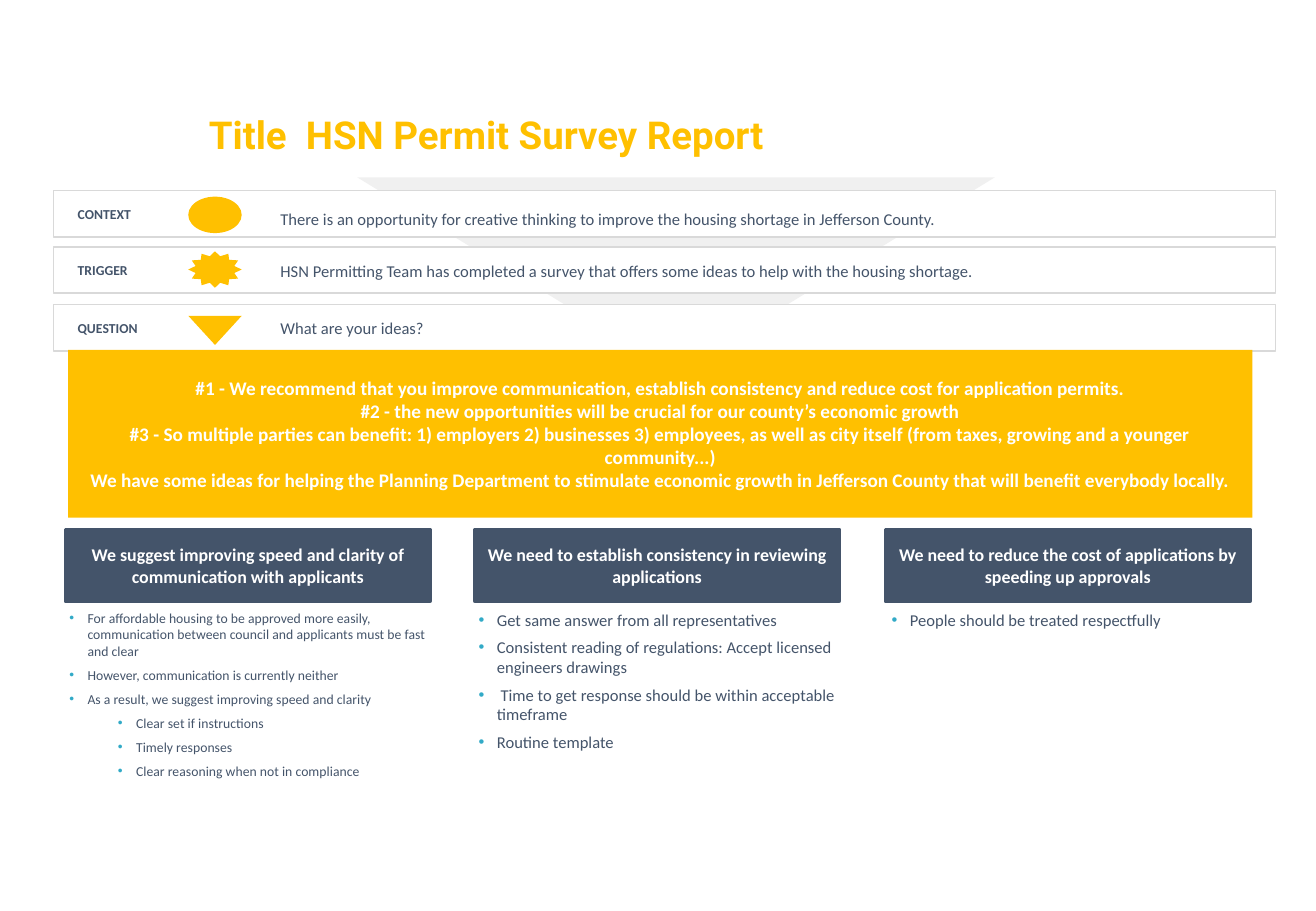
"""Builds the permit survey report slide."""
from lxml.etree import SubElement
from pptx import Presentation
from pptx.dml.color import RGBColor
from pptx.enum.shapes import MSO_SHAPE
from pptx.enum.text import MSO_ANCHOR, MSO_AUTO_SIZE, PP_ALIGN
from pptx.oxml.ns import qn
from pptx.util import Pt

GOLD = RGBColor(0xFF, 0xC0, 0x00)
SLATE = RGBColor(0x44, 0x54, 0x6A)
GREY = RGBColor(0xD9, 0xD9, 0xD9)
WHITE = RGBColor(0xFF, 0xFF, 0xFF)
BULLET = RGBColor(0x32, 0xAA, 0xC7)

SMALL, BODY = 8.1, 9.8
LABEL = {"size": Pt(SMALL), "color": SLATE, "bold": True}
STATEMENT = {"size": Pt(BODY), "color": SLATE}
BANNER = {"size": Pt(11.4), "color": WHITE, "bold": True}
HEADING = {"size": Pt(10.6), "color": WHITE, "bold": True}
TITLE = {"size": Pt(22.8), "color": GOLD, "bold": True, "name": "Roboto"}

ROWS = [
    ("CONTEXT", "There is an opportunity for creative thinking to improve the housing "
     "shortage in Jefferson County.", 126.7, 130, MSO_SHAPE.OVAL, 127.4, 21.6, 0),
    ("TRIGGER", "HSN Permitting Team has completed a survey that offers some ideas to "
     "help with the housing shortage.", 159.9, 160.6, MSO_SHAPE.STAR_12_POINT, 159.8, 21.6, 0),
    ("QUESTION", "What are your ideas?", 194.2, 194.4,
     MSO_SHAPE.ISOSCELES_TRIANGLE, 195.8, 17.3, 180),
]
RECOMMENDATIONS = [
    "#1 - We recommend that you improve communication, establish consistency and reduce "
    "cost for application permits.",
    "#2 - the new opportunities will be crucial for our county’s economic growth",
    "#3 - So multiple parties can benefit: 1) employers 2) businesses 3) employees, as well "
    "as city itself (from taxes, growing and a younger community...)",
    "We have some ideas for helping the Planning Department to stimulate economic growth in "
    "Jefferson County that will benefit everybody locally.",
]
COLUMNS = [
    ("We suggest improving speed and clarity of communication with applicants",
     38.9, 38.9, 228.2, SMALL, [
         (0, "For affordable housing to be approved more easily, communication between "
             "council and applicants must be fast and clear"),
         (0, "However, communication is currently neither"),
         (0, "As a result, we suggest improving speed and clarity"),
         (1, "Clear set if instructions"),
         (1, "Timely responses"),
         (1, "Clear reasoning when not in compliance")]),
    ("We need to establish consistency in reviewing applications",
     281.5, 281.5, 218.9, BODY, [
         (0, "Get same answer from all representatives"),
         (0, "Consistent reading of regulations: Accept licensed engineers drawings"),
         (0, " Time to get response should be within acceptable timeframe"),
         (0, "Routine template")]),
    ("We need to reduce the cost of applications by speeding up approvals",
     524.9, 526.3, 218.9, BODY, [(0, "People should be treated respectfully")]),
]


def add_text(para, text, style):
    """Add one formatted span to a paragraph."""
    span = para.add_run()
    span.text = text
    for key, value in {"name": "Calibri", **style}.items():
        if key == "color":
            span.font.color.rgb = value
        else:
            setattr(span.font, key, value)


def fill_frame(frame, texts, style, align=PP_ALIGN.LEFT):
    """Write one paragraph per text into a vertically centred frame."""
    settings = {"word_wrap": True, "auto_size": MSO_AUTO_SIZE.NONE,
                "vertical_anchor": MSO_ANCHOR.MIDDLE}
    for key, value in settings.items():
        setattr(frame, key, value)
    for index, text in enumerate(texts):
        para = frame.add_paragraph() if index else frame.paragraphs[0]
        para.alignment = align
        add_text(para, text, style)


def add_figure(page, kind, left, top, width, height, fill, line=None, weight=1, rotation=0):
    """Add a flat preset shape."""
    figure = page.shapes.add_shape(kind, Pt(left), Pt(top), Pt(width), Pt(height))
    figure.shadow.inherit = False
    figure.rotation = rotation
    figure.fill.solid()
    figure.fill.fore_color.rgb = fill
    if line is None:
        figure.line.fill.background()
    else:
        figure.line.color.rgb = line
        figure.line.width = Pt(weight)
    return figure


def add_caption(page, left, middle, width, text, style):
    """Add a one-line text box centred on a height."""
    height = 20.6
    box = page.shapes.add_textbox(Pt(left), Pt(middle - height / 2), Pt(width), Pt(height))
    fill_frame(box.text_frame, [text], style)


def add_bullets(page, left, width, size, items):
    """Add a bulleted list with two levels."""
    box = page.shapes.add_textbox(Pt(left), Pt(358.6), Pt(width), Pt(134.6))
    frame = box.text_frame
    margins = {"margin_left": 2.2, "margin_right": 2.2, "margin_top": 2.9, "margin_bottom": 2.9}
    for key, value in margins.items():
        setattr(frame, key, Pt(value))
    fill_frame(frame, [text for _, text in items], {"size": Pt(size), "color": SLATE})
    frame.vertical_anchor = MSO_ANCHOR.TOP
    for para, (level, _) in zip(frame.paragraphs, items):
        para.level = level
        para.space_after = Pt(4.5)
        properties = para._p.get_or_add_pPr()
        properties.set("marL", str(Pt(10.8 + 28.8 * level)))
        properties.set("indent", str(-Pt(10.8)))
        color = SubElement(properties, qn("a:buClr"))
        SubElement(color, qn("a:srgbClr")).set("val", str(BULLET))
        SubElement(properties, qn("a:buFont")).set("typeface", "Arial")
        SubElement(properties, qn("a:buChar")).set("char", "•")


def add_title(page, text):
    """Place and format the title placeholder."""
    title = page.shapes.title
    place = {"left": 116.6, "top": 51.8, "width": 590.4, "height": 59}
    for key, value in place.items():
        setattr(title, key, Pt(value))
    fill_frame(title.text_frame, [text], TITLE)
    title.text_frame.paragraphs[0].line_spacing = 0.9


def add_backdrop(page):
    """Add the translucent triangle that points down behind the rows."""
    backdrop = add_figure(page, MSO_SHAPE.ISOSCELES_TRIANGLE, 211.7, 105.1, 378, 115.9,
                          GREY, rotation=180)
    color = backdrop._element.spPr.find(qn("a:solidFill"))[0]
    SubElement(color, qn("a:alpha")).set("val", "39000")


def add_row(page, label, statement, middle, text_middle, icon, icon_middle, icon_height, turn):
    """Add one framed row with label, icon and statement."""
    add_figure(page, MSO_SHAPE.RECTANGLE, 31.7, middle - 13.7, 724.3, 27.4, WHITE, GREY)
    add_caption(page, 38.9, middle, 92.9, label, LABEL)
    add_figure(page, icon, 111.6, icon_middle - icon_height / 2, 31.7, icon_height,
               GOLD, rotation=turn)
    add_caption(page, 159.1, text_middle, 596.9, statement, STATEMENT)


def add_column(page, heading, left, list_left, list_width, size, items):
    """Add a heading block and the list below it."""
    add_bullets(page, list_left, list_width, size, items)
    block = add_figure(page, MSO_SHAPE.RECTANGLE, left, 313.9, 216, 42.5, SLATE, SLATE, 2.25)
    fill_frame(block.text_frame, [heading], HEADING, PP_ALIGN.CENTER)


def main():
    """Build and save the deck."""
    deck = Presentation()
    deck.slide_width, deck.slide_height = Pt(780), Pt(540)
    page = deck.slides.add_slide(deck.slide_layouts[5])
    add_title(page, "Title  HSN Permit Survey Report")
    add_backdrop(page)
    for row in ROWS:
        add_row(page, *row)
    banner = add_figure(page, MSO_SHAPE.RECTANGLE, 40.3, 207.4, 702, 99.4, GOLD)
    fill_frame(banner.text_frame, RECOMMENDATIONS, BANNER, PP_ALIGN.CENTER)
    for column in COLUMNS:
        add_column(page, *column)
    deck.save("out.pptx")


if __name__ == "__main__":
    main()
